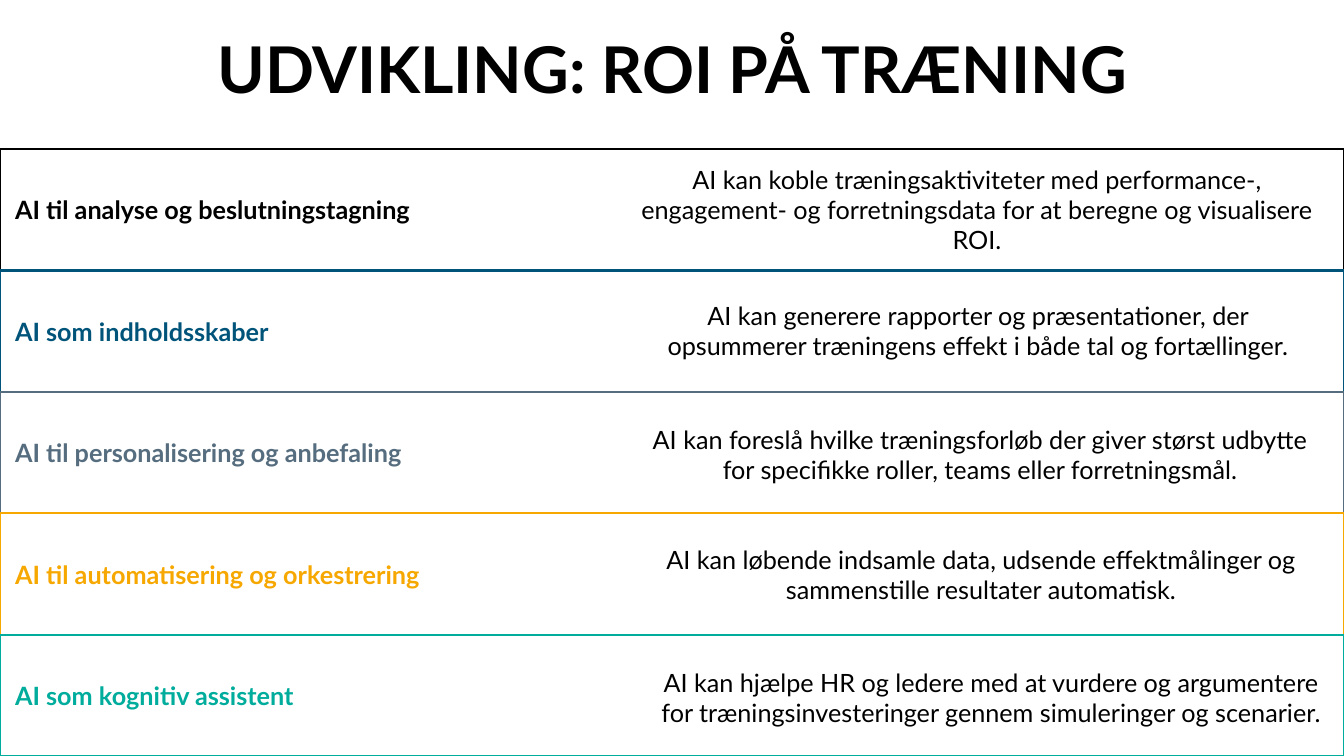
from dataclasses import dataclass

from pptx import Presentation
from pptx.dml.color import RGBColor
from pptx.enum.shapes import MSO_SHAPE
from pptx.enum.text import MSO_ANCHOR, MSO_AUTO_SIZE, PP_ALIGN
from pptx.util import Inches, Pt


@dataclass(frozen=True)
class Theme:
    font: str = "Lato"
    title_size: int = 46
    body_size: int = 18
    black: str = "000000"
    blue: str = "00547A"
    slate: str = "556D7E"
    amber: str = "F6A800"
    teal: str = "00AC9C"


theme = Theme()

SLIDE_W, SLIDE_H = 13.33, 7.5
ROWS_TOP = 1.48
ROW_H = (SLIDE_H - ROWS_TOP) / 5

# label, colour, description, left and top of the description
ROWS = [
    ("AI til analyse og beslutningstagning", theme.black,
     "AI kan koble træningsaktiviteter med performance-, engagement- og "
     "forretningsdata for at beregne og visualisere ROI.", 6.19, 1.48),
    ("AI som indholdsskaber", theme.blue,
     "AI kan generere rapporter og præsentationer, der opsummerer "
     "træningens effekt i både tal og fortællinger.", 6.2, 2.68),
    ("AI til personalisering og anbefaling", theme.slate,
     "AI kan foreslå hvilke træningsforløb der giver størst udbytte for "
     "specifikke roller, teams eller forretningsmål.", 6.22, 3.91),
    ("AI til automatisering og orkestrering", theme.amber,
     "AI kan løbende indsamle data, udsende effektmålinger og "
     "sammenstille resultater automatisk.", 6.23, 5.1),
    ("AI som kognitiv assistent", theme.teal,
     "AI kan hjælpe HR og ledere med at vurdere og argumentere for "
     "træningsinvesteringer gennem simuleringer og scenarier.", 6.33, 6.32),
]


def write(sp, text, size, color, align, bold=False):
    """Set one vertically centred paragraph in a shape."""
    tf = sp.text_frame
    tf.word_wrap = True
    tf.auto_size = MSO_AUTO_SIZE.NONE
    tf.vertical_anchor = MSO_ANCHOR.MIDDLE
    p = tf.paragraphs[0]
    p.alignment = align
    r = p.add_run()
    r.text = text
    r.font.name = theme.font
    r.font.size = Pt(size)
    r.font.bold = bold
    r.font.color.rgb = RGBColor.from_string(color)


prs = Presentation()
prs.slide_width, prs.slide_height = Inches(SLIDE_W), Inches(SLIDE_H)
s = prs.slides.add_slide(prs.slide_layouts[5])

title = s.shapes.title
title.left, title.top = Inches(0), Inches(0)
title.width, title.height = Inches(SLIDE_W), Inches(1.34)
write(title, "UDVIKLING: ROI PÅ TRÆNING", theme.title_size, theme.black,
      PP_ALIGN.CENTER, bold=True)

bands = s.shapes.add_group_shape()
for i, (label, color, description, left, top) in enumerate(ROWS):
    band = bands.shapes.add_shape(
        MSO_SHAPE.RECTANGLE, Inches(0), Inches(ROWS_TOP + i * ROW_H),
        Inches(SLIDE_W), Inches(ROW_H))
    band.shadow.inherit = False
    band.fill.background()
    band.line.color.rgb = RGBColor.from_string(color)
    band.line.width = Pt(1.5)
    band.text_frame.margin_left = Inches(0.15)
    write(band, label, theme.body_size, color, PP_ALIGN.LEFT, bold=True)

    box = s.shapes.add_textbox(Inches(left), Inches(top), Inches(7), Inches(1.2))
    write(box, description, theme.body_size, theme.black, PP_ALIGN.CENTER)

prs.save("out.pptx")
